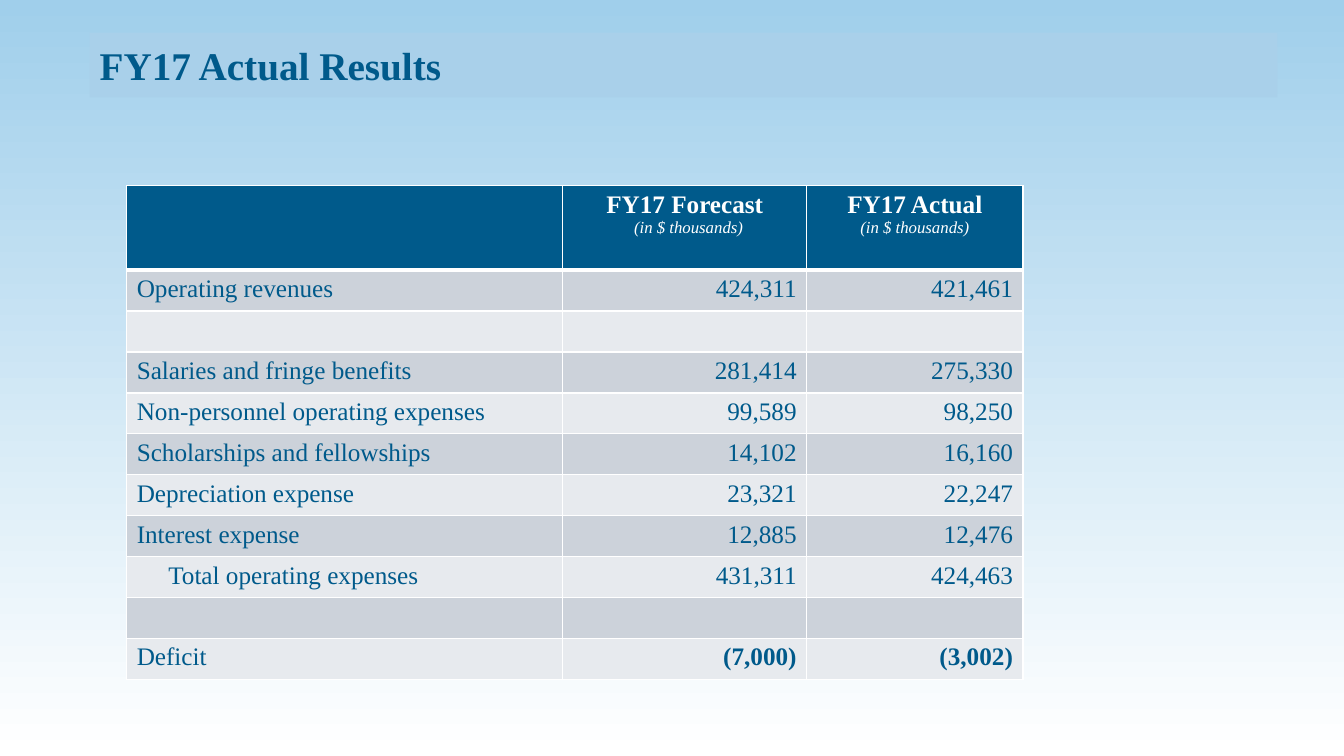
from lxml import etree
from pptx import Presentation
from pptx.dml.color import RGBColor
from pptx.enum.text import MSO_ANCHOR, PP_ALIGN
from pptx.oxml.ns import qn
from pptx.util import Pt

LEFT, CENTER, RIGHT = PP_ALIGN.LEFT, PP_ALIGN.CENTER, PP_ALIGN.RIGHT
MIDDLE = MSO_ANCHOR.MIDDLE
FONT = "Times New Roman"
COLORS = {
    "navy": "005A8B", "white": "FFFFFF", "sky": "A0CFEB",
    "title_band": "A9D0EA", "dark_band": "CCD2DA", "light_band": "E7EAEE",
}


def color(name):
    return RGBColor.from_string(COLORS[name])


def write(paragraph, text, size=18, ink="navy", bold=False, italic=False,
          align=LEFT, indent=0):
    if indent:
        paragraph._p.get_or_add_pPr().set("marL", str(Pt(indent)))
    paragraph.alignment = align
    run = paragraph.add_run()
    run.text = text
    font = run.font
    font.name, font.size, font.bold, font.italic = FONT, Pt(size), bold, italic
    font.color.rgb = color(ink)


presentation = Presentation()
presentation.slide_width, presentation.slide_height = Pt(960), Pt(540)
slide = presentation.slides.add_slide(presentation.slide_layouts[5])

# Background gradient, top to bottom
background = slide.background.fill
background.gradient()
background.gradient_angle = 270
for stop, name, position in zip(background.gradient_stops, ("sky", "white"), (0, 1)):
    stop.color.rgb = color(name)
    stop.position = position

# Title
title = slide.shapes.title
title.left, title.top, title.width, title.height = Pt(64), Pt(23.5), Pt(848.5), Pt(46)
title.fill.solid()
title.fill.fore_color.rgb = color("title_band")
title.text_frame.vertical_anchor = MIDDLE
write(title.text_frame.paragraphs[0], "FY17 Actual Results", size=28, bold=True)

# Table frame
rows = [
    ("Operating revenues", "424,311", "421,461"),
    ("", "", ""),
    ("Salaries and fringe benefits", "281,414", "275,330"),
    ("Non-personnel operating expenses", "99,589", "98,250"),
    ("Scholarships and fellowships", "14,102", "16,160"),
    ("Depreciation expense", "23,321", "22,247"),
    ("Interest expense", "12,885", "12,476"),
    ("Total operating expenses", "431,311", "424,463"),
    ("", "", ""),
    ("Deficit", "(7,000)", "(3,002)"),
]
HEADER_HEIGHT, ROW_HEIGHT = 60.25, 29.25
column_widths = (311.5, 174.25, 154.5)
table = slide.shapes.add_table(
    len(rows) + 1, len(column_widths), Pt(90.5), Pt(132.75), Pt(sum(column_widths)),
    Pt(HEADER_HEIGHT + ROW_HEIGHT * len(rows))).table
for column, width in zip(table.columns, column_widths):
    column.width = Pt(width)
for index, row in enumerate(table.rows):
    row.height = Pt(ROW_HEIGHT if index else HEADER_HEIGHT)

# Header text
for index, (heading, indent) in enumerate((("FY17 Forecast", 5.5), ("FY17 Actual", 0)), 1):
    frame = table.cell(0, index).text_frame
    write(frame.paragraphs[0], heading, ink="white", bold=True, align=CENTER)
    write(frame.add_paragraph(), "(in $ thousands)", size=12, ink="white",
          italic=True, align=CENTER, indent=indent)

# Body text
for row_index, values in enumerate(rows, 1):
    for column_index, value in enumerate(values):
        if value:
            write(table.cell(row_index, column_index).text_frame.paragraphs[0], value,
                  bold=value.startswith("("),
                  align=RIGHT if column_index else LEFT,
                  indent=22.5 if value.startswith("Total") else 0)

# Cell fills and white borders, heavier under the header
for row_index in range(len(rows) + 1):
    band = ("light_band", "dark_band")[row_index % 2] if row_index else "navy"
    border_widths = {
        "a:lnL": 1, "a:lnR": 1,
        "a:lnT": 3 if row_index == 1 else 1,
        "a:lnB": 3 if row_index == 0 else 1,
    }
    for column_index in range(len(column_widths)):
        cell = table.cell(row_index, column_index)
        cell.fill.solid()
        cell.fill.fore_color.rgb = color(band)
        properties = cell._tc.get_or_add_tcPr()
        for order, (tag, width) in enumerate(border_widths.items()):
            line = etree.Element(qn(tag), w=str(Pt(width)))
            line_fill = etree.SubElement(line, qn("a:solidFill"))
            etree.SubElement(line_fill, qn("a:srgbClr"), val=COLORS["white"])
            properties.insert(order, line)

presentation.save("out.pptx")
